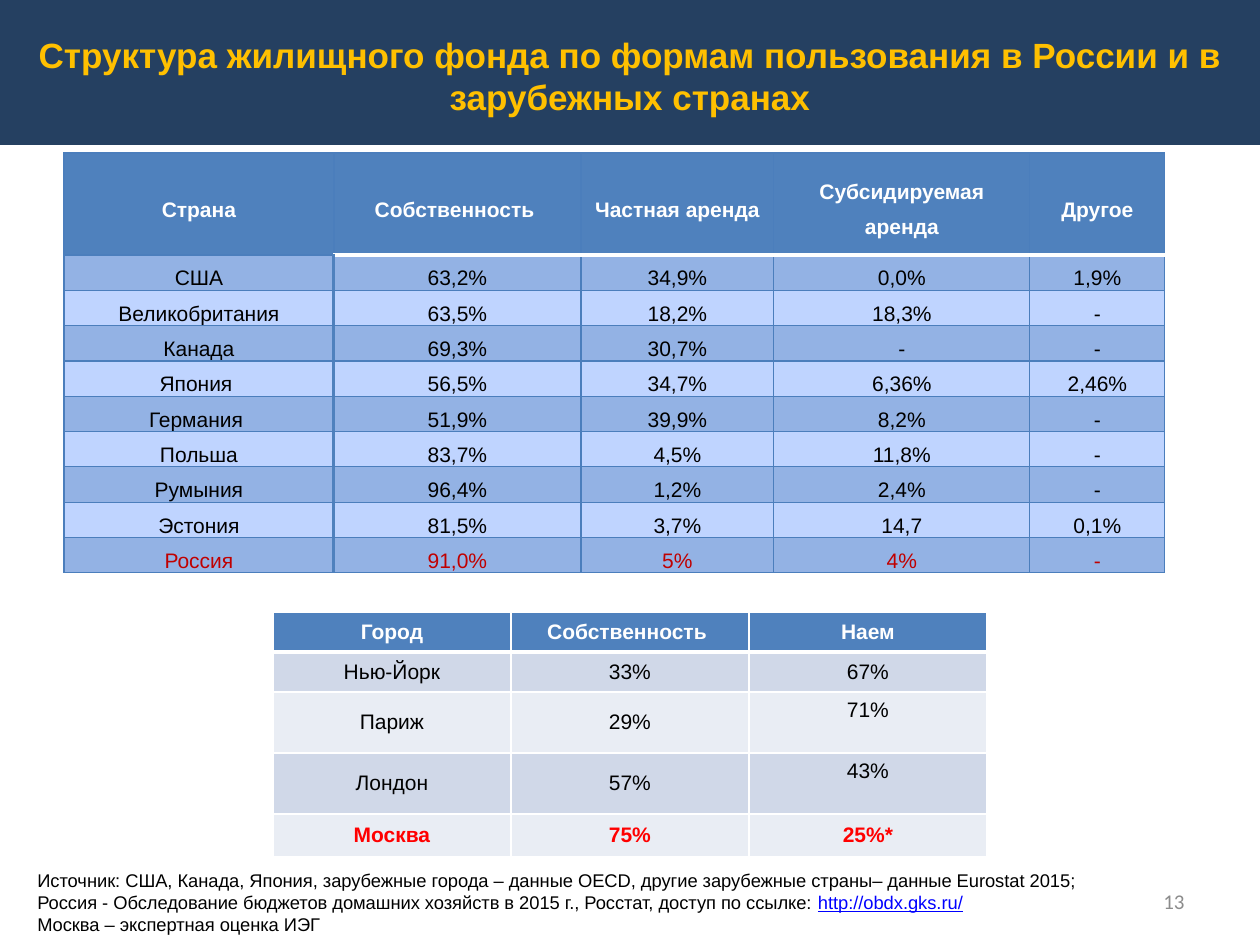
from lxml.etree import SubElement
from pptx import Presentation
from pptx.dml.color import RGBColor
from pptx.enum.shapes import MSO_SHAPE
from pptx.enum.text import MSO_ANCHOR as ANCHOR, MSO_AUTO_SIZE as FIT, PP_ALIGN as ALIGN
from pptx.oxml.ns import qn
from pptx.util import Emu, Pt

EMU_PER_PX = 914400 / 126
WHITE = RGBColor(0xFF, 0xFF, 0xFF)
BLACK = RGBColor(0, 0, 0)
NAVY = RGBColor(0x25, 0x40, 0x61)
GOLD = RGBColor(0xFF, 0xC0, 0x00)
BLUE = RGBColor(0x4F, 0x81, 0xBD)
EDGE = RGBColor(0x4B, 0x7E, 0xBC)
BAND_DARK = RGBColor(0x93, 0xB2, 0xE4)
BAND_LIGHT = RGBColor(0xBF, 0xD4, 0xFF)
GREY_DARK = RGBColor(0xD0, 0xD8, 0xE8)
GREY_LIGHT = RGBColor(0xE9, 0xED, 0xF4)
GREY_TEXT = RGBColor(0x8C, 0x8C, 0x8C)
DARK_RED = RGBColor(0xC0, 0, 0)
RED = RGBColor(0xFF, 0, 0)
LINK = RGBColor(0, 0, 0xFF)

COUNTRIES = [
    ["Страна", "Собственность ", "Частная аренда", "Субсидируемая аренда", "Другое"],
    ["США", "63,2%", "34,9%", "0,0%", "1,9%"],
    ["Великобритания", "63,5%", "18,2%", "18,3%", "-"],
    ["Канада", "69,3%", "30,7%", "-", "-"],
    ["Япония ", "56,5%", "34,7%", "6,36%", "2,46%"],
    ["Германия ", "51,9%", "39,9%", "8,2%", "-"],
    ["Польша", "83,7%", "4,5%", "11,8%", "-"],
    ["Румыния", "96,4%", "1,2%", "2,4%", "-"],
    ["Эстония", "81,5%", "3,7%", "14,7", "0,1%"],
    ["Россия", "91,0%", "5%", "4%", "-"],
]
CITIES = [
    ["Город", "Собственность ", "Наем"],
    ["Нью-Йорк", "33%", "67%"],
    ["Париж", "29%", "71%"],
    ["Лондон", "57%", "43%"],
    ["Москва", "75%", "25%*"],
]
SOURCE = ("Источник: США, Канада, Япония, зарубежные города – данные OECD, "
          "другие зарубежные страны– данные Eurostat 2015; "
          "Россия - Обследование бюджетов домашних хозяйств в 2015 г., "
          "Росстат, доступ по ссылке: ")


def px(n):
    return Emu(round(n * EMU_PER_PX))


def add_run(p, text, size=12, color=BLACK, bold=False, underline=False, font="Arial",
            align=ALIGN.LEFT, spacing=None):
    p.alignment = align
    if spacing:
        p.line_spacing = spacing
    r = p.add_run()
    r.text = text
    r.font.size, r.font.name = Pt(size), font
    r.font.bold, r.font.underline = bold, underline
    r.font.color.rgb = color


def set_border(cell, side, color, width):
    tc_pr = cell._tc.get_or_add_tcPr()
    ln = SubElement(tc_pr, qn(f"a:ln{side}"), w=str(Pt(width)))
    SubElement(SubElement(ln, qn("a:solidFill")), qn("a:srgbClr"), val=str(color))


class SlideBuilder:
    def __init__(self, prs):
        self.s = prs.slides.add_slide(prs.slide_layouts[5])

    def band(self, x, y, w, h, color):
        sp = self.s.shapes.add_shape(MSO_SHAPE.RECTANGLE, px(x), px(y), px(w), px(h))
        sp.shadow.inherit = False
        sp.fill.solid()
        sp.fill.fore_color.rgb = color
        sp.line.fill.background()

    def title(self, text, x, y, w, h):
        sp = self.s.shapes.title
        self.s.shapes._spTree.append(sp._element)
        sp.left, sp.top, sp.width, sp.height = px(x), px(y), px(w), px(h)
        tf = sp.text_frame
        tf.auto_size, tf.vertical_anchor = FIT.NONE, ANCHOR.MIDDLE
        add_run(tf.paragraphs[0], text, size=20, color=GOLD, bold=True, align=ALIGN.CENTER)

    def text(self, x, y, w, h, anchor=ANCHOR.TOP):
        tf = self.s.shapes.add_textbox(px(x), px(y), px(w), px(h)).text_frame
        tf.word_wrap, tf.vertical_anchor = True, anchor
        return tf

    def table(self, data, x, y, cols, rows, bands, borders, accent, accent_bold=False,
              spacing=None, insets=None, top_cells=()):
        frame = self.s.shapes.add_table(len(rows), len(cols), px(x), px(y),
                                        px(sum(cols)), px(sum(rows)))
        table = frame.table
        table.horz_banding = table.first_row = False
        for col, w in zip(table.columns, cols):
            col.width = px(w)
        for i, (row, h) in enumerate(zip(table.rows, rows)):
            row.height = px(h)
            head, last = i == 0, i == len(rows) - 1
            color = WHITE if head else accent if last else BLACK
            for j, cell in enumerate(row.cells):
                for side in "LRTB":
                    set_border(cell, side, *borders(i, j, side))
                cell.fill.solid()
                cell.fill.fore_color.rgb = BLUE if head else bands[(i - 1) % 2]
                cell.vertical_anchor = ANCHOR.TOP if (i, j) in top_cells else ANCHOR.MIDDLE
                if insets:
                    cell.margin_left = cell.margin_right = px(insets[0])
                    cell.margin_top = cell.margin_bottom = px(insets[1])
                add_run(cell.text_frame.paragraphs[0], data[i][j], color=color,
                        bold=head or (last and accent_bold), align=ALIGN.CENTER,
                        spacing=spacing)


def under_header(i, side):
    return (i, side) in ((0, "B"), (1, "T"))


def country_border(i, j, side):
    if under_header(i, side) and j > 0:
        return WHITE, 2
    if i > 0 and (j, side) in ((0, "R"), (1, "L")):
        return BLUE, 2
    return EDGE, 0.75


def city_border(i, j, side):
    return WHITE, 3 if under_header(i, side) else 1


def main():
    prs = Presentation()
    prs.slide_width, prs.slide_height = px(1260), px(945)
    b = SlideBuilder(prs)

    tf = b.text(903, 876, 294, 50, ANCHOR.MIDDLE)
    add_run(tf.paragraphs[0], "13", color=GREY_TEXT, font="Calibri", align=ALIGN.RIGHT)

    b.table(CITIES, 273, 612, [238] * 3, [40, 40, 61, 61, 43], (GREY_DARK, GREY_LIGHT),
            city_border, RED, accent_bold=True, top_cells=((2, 2), (3, 2)))
    b.band(0, 0, 1260, 145, NAVY)
    b.title("Структура жилищного фонда по формам пользования в России и в зарубежных странах",
            25, -3, 1210, 157)
    b.table(COUNTRIES, 64, 153, [270, 247, 193, 256, 135], [102] + [35] * 9,
            (BAND_DARK, BAND_LIGHT), country_border, DARK_RED, spacing=1.5, insets=(9, 0))

    tf = b.text(25, 863, 1121, 79)
    p = tf.paragraphs[0]
    add_run(p, SOURCE, size=10.5)
    add_run(p, "http://obdx.gks.ru/", size=10.5, color=LINK, underline=True)
    add_run(tf.add_paragraph(), "Москва – экспертная оценка ИЭГ", size=10.5)

    prs.save("out.pptx")


if __name__ == "__main__":
    main()
